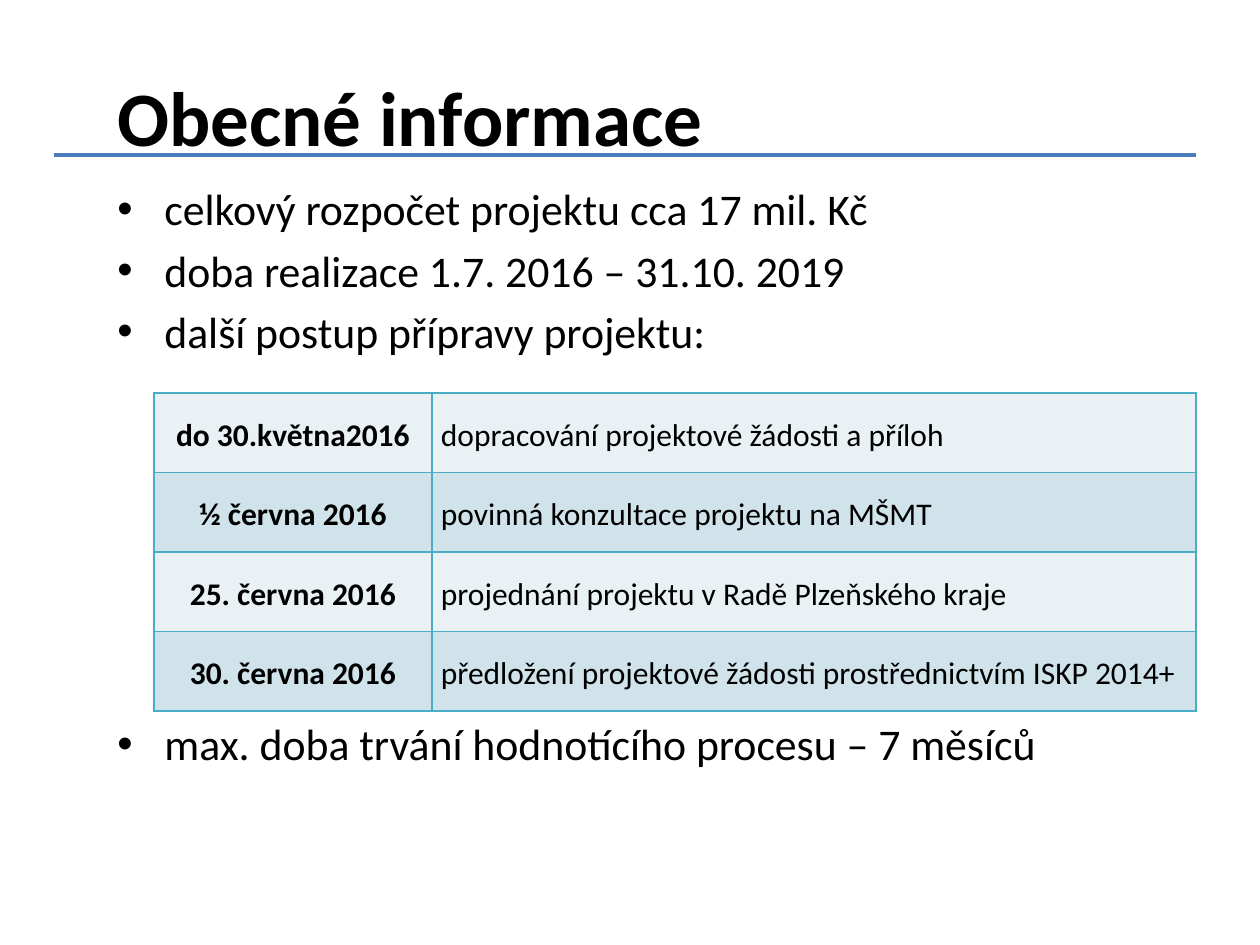
from pptx import Presentation
from pptx.dml.color import RGBColor
from pptx.enum.shapes import MSO_CONNECTOR
from pptx.enum.text import MSO_ANCHOR, PP_ALIGN
from pptx.oxml.ns import qn
from pptx.util import Emu, Pt
from lxml.etree import SubElement

BLACK = RGBColor(0x00, 0x00, 0x00)
BLUE = RGBColor(0x4B, 0x7E, 0xBC)
TEAL = RGBColor(0x4B, 0xAC, 0xC6)
PALE = RGBColor(0xE9, 0xF1, 0xF5)
MIST = RGBColor(0xD0, 0xE3, 0xEA)

STEPS = [
    ("do 30.května2016", "dopracování projektové žádosti a příloh"),
    ("½ června 2016", "povinná konzultace projektu na MŠMT"),
    ("25. června 2016", "projednání projektu v Radě Plzeňského kraje"),
    ("30. června 2016", "předložení projektové žádosti prostřednictvím ISKP 2014+"),
]


def px(count):
    return Emu(round(count * 914400 / 126))


class Sheet:
    font = "Calibri"

    def __init__(self, slide):
        self.slide = slide

    def text(self, para, words, size, bold=False):
        run = para.add_run()
        run.text = words
        run.font.name = self.font
        run.font.size = Pt(size)
        run.font.bold = bold
        run.font.color.rgb = BLACK

    def box(self, left, top, width, height, anchor=MSO_ANCHOR.TOP):
        shape = self.slide.shapes.add_textbox(px(left), px(top), px(width), px(height))
        frame = shape.text_frame
        frame.word_wrap = True
        frame.vertical_anchor = anchor
        return frame

    def title(self, words, *place):
        frame = self.box(*place, anchor=MSO_ANCHOR.MIDDLE)
        self.text(frame.paragraphs[0], words, 44, True)

    def bullets(self, items, *place):
        frame = self.box(*place)
        for i, words in enumerate(items):
            para = frame.add_paragraph() if i else frame.paragraphs[0]
            para.alignment = PP_ALIGN.JUSTIFY
            if i:
                para.space_before = Pt(5)
            props = para._p.get_or_add_pPr()
            props.set("marL", str(px(47)))
            props.set("indent", str(-px(47)))
            SubElement(props, qn("a:buFont"), typeface="Arial")
            SubElement(props, qn("a:buChar"), char="•")
            self.text(para, words, 25)

    def rule(self, left, right, top):
        line = self.slide.shapes.add_connector(
            MSO_CONNECTOR.STRAIGHT, px(left), px(top), px(right), px(top))
        line.line.color.rgb = BLUE
        line.line.width = Pt(2.25)
        SubElement(line._element.spPr, qn("a:effectLst"))

    def border(self, cell):
        props = cell._tc.get_or_add_tcPr()
        for i, side in enumerate(("lnL", "lnR", "lnT", "lnB")):
            edge = props.makeelement(qn(f"a:{side}"), {"w": str(Pt(1))})
            fill = SubElement(edge, qn("a:solidFill"))
            SubElement(fill, qn("a:srgbClr"), val=str(TEAL))
            props.insert(i, edge)

    def table(self, rows, widths, left, top, height):
        grid = self.slide.shapes.add_table(
            len(rows), len(widths), px(left), px(top), px(sum(widths)), px(height)).table
        for col, width in zip(grid.columns, widths):
            col.width = px(width)
        for r, row in enumerate(rows):
            for c, words in enumerate(row):
                cell = grid.cell(r, c)
                cell.fill.solid()
                cell.fill.fore_color.rgb = MIST if r % 2 else PALE
                cell.vertical_anchor = MSO_ANCHOR.MIDDLE
                cell.margin_left = cell.margin_right = px(9)
                cell.margin_top = cell.margin_bottom = 0
                para = cell.text_frame.paragraphs[0]
                para.alignment = PP_ALIGN.LEFT if c else PP_ALIGN.CENTER
                para.line_spacing = 1.15
                self.text(para, words, 18, c == 0)
                self.border(cell)


def main():
    deck = Presentation()
    deck.slide_width, deck.slide_height = px(1260), px(945)
    sheet = Sheet(deck.slides.add_slide(deck.slide_layouts[6]))
    sheet.title("Obecné informace", 105, 37, 1113, 158)
    sheet.bullets([
        "celkový rozpočet projektu cca 17 mil. Kč",
        "doba realizace 1.7. 2016 – 31.10. 2019",
        "další postup přípravy projektu:",
    ], 105, 176, 1140, 200)
    sheet.bullets(["max. doba trvání hodnotícího procesu – 7 měsíců"], 105, 711, 1140, 66)
    sheet.rule(54, 1196, 155)
    sheet.table(STEPS, (278, 764), 154, 393, 318)
    deck.save("out.pptx")


if __name__ == "__main__":
    main()
